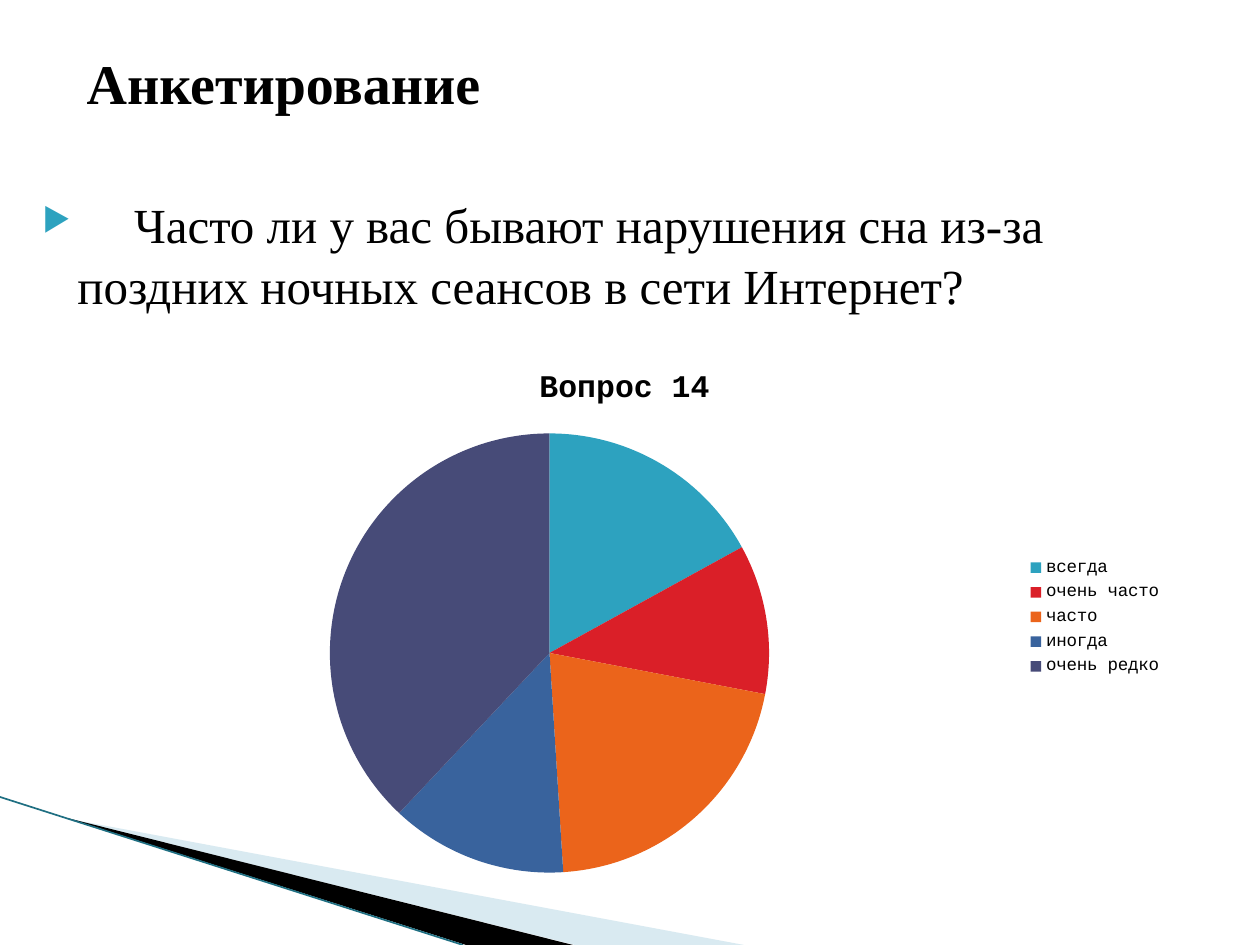
from dataclasses import dataclass

from lxml import etree
from pptx import Presentation
from pptx import util as u
from pptx.chart.data import CategoryChartData
from pptx.dml.color import RGBColor
from pptx.enum import chart as charts
from pptx.enum import shapes, text
from pptx.oxml.ns import qn

PX = 914400 / 126


@dataclass(frozen=True)
class Theme:
    serif: str = "Times New Roman"
    mono: str = "Courier New"
    ink: str = "000000"
    accent: str = "2DA2BF"
    pale: str = "A0CBDC"
    edge: str = "1F6F82"
    slices: tuple = ("2DA2BF", "DA1F28", "EB641B", "39639D", "474B78")
    title: int = 32
    body: int = 28
    gap: int = 27
    chart_title: int = 18
    legend: int = 10


THEME = Theme()


def px(value):
    return u.Emu(round(value * PX))


def color(value):
    return RGBColor.from_string(value)


def set_font(font, size, face, ink=THEME.ink, bold=False):
    font.size = u.Pt(size)
    font.name = face
    font.bold = bold
    font.color.rgb = color(ink)


def add_span(para, wording, spacing=0, **style):
    span = para.add_run()
    span.text = wording
    set_font(span.font, **style)
    if spacing:
        span.font._element.set("spc", str(spacing))


def add_bullet(para, mark, ink, percent, margin, indent):
    properties = para._p.get_or_add_pPr()
    properties.set("marL", str(px(margin)))
    properties.set("indent", str(px(indent)))
    shade = etree.SubElement(properties, qn("a:buClr"))
    etree.SubElement(shade, qn("a:srgbClr"), val=ink)
    etree.SubElement(properties, qn("a:buSzPct"), val=str(percent * 1000))
    etree.SubElement(properties, qn("a:buChar"), char=mark)


def add_wedge(page, left, top, points, fill, opacity=100):
    start, *rest = [(left + x, top + y) for x, y in points]
    builder = page.shapes.build_freeform(*start, scale=PX)
    builder.add_line_segments(rest, close=True)
    wedge = builder.convert_to_shape()
    wedge.shadow.inherit = False
    wedge.fill.solid()
    wedge.fill.fore_color.rgb = color(fill)
    wedge.line.fill.background()
    if opacity < 100:
        shade = wedge._element.spPr.find(qn("a:solidFill"))[0]
        etree.SubElement(shade, qn("a:alpha"), val=str(opacity * 1000))


def add_corner(page, left, top, width, height):
    bottom = height
    add_wedge(page, left, top, [(69, 22), (width, bottom), (575, bottom)],
              THEME.pale, opacity=40)
    add_wedge(page, left, top, [(67, 21), (573, bottom), (466, bottom)], THEME.ink)
    edge = page.shapes.add_connector(
        shapes.MSO_CONNECTOR.STRAIGHT,
        px(left), px(top), px(left + 463), px(top + bottom))
    edge.line.color.rgb = color(THEME.edge)
    edge.line.width = u.Pt(0.95)
    etree.SubElement(edge._element.spPr, qn("a:effectLst"))


def add_title(page, left, top, width, height):
    box = page.shapes.title
    box.left, box.top, box.width, box.height = map(px, (left, top, width, height))
    frame = box.text_frame
    frame.word_wrap = True
    frame.auto_size = text.MSO_AUTO_SIZE.NONE
    frame.vertical_anchor = text.MSO_ANCHOR.MIDDLE
    para = frame.paragraphs[0]
    para.alignment = text.PP_ALIGN.LEFT
    add_span(para, "Анкетирование", size=THEME.title, face=THEME.serif, bold=True)


def add_question(page, left, top, width, height):
    box = page.shapes.add_textbox(*map(px, (left, top, width, height)))
    frame = box.text_frame
    frame.word_wrap = True
    para = frame.paragraphs[0]
    para.line_spacing = 1.05
    add_bullet(para, "▶", THEME.accent, percent=68, margin=50, indent=-35)
    add_span(para, " ", spacing=1620, size=THEME.gap, face=THEME.mono)
    add_span(para, "Часто ли у вас бывают нарушения сна из-за "
             "поздних ночных сеансов в сети Интернет?",
             size=THEME.body, face=THEME.serif)


def add_answers(page, left, top, width, height):
    data = CategoryChartData()
    data.categories = ["всегда", "очень часто", "часто", "иногда", "очень редко"]
    data.add_series("Вопрос 14", (17, 11, 21, 13, 38))
    chart = page.shapes.add_chart(
        charts.XL_CHART_TYPE.PIE, *map(px, (left, top, width, height)), data).chart
    set_font(chart.font, THEME.legend, THEME.mono)
    chart.has_title = True
    para = chart.chart_title.text_frame.paragraphs[0]
    add_span(para, "Вопрос 14", size=THEME.chart_title, face=THEME.mono, bold=True)
    chart.chart_title.include_in_layout = False
    chart.has_legend = True
    chart.legend.position = charts.XL_LEGEND_POSITION.RIGHT
    chart.legend.include_in_layout = False
    set_font(chart.legend.font, THEME.legend, THEME.mono)
    plot = chart.plots[0]
    plot.vary_by_categories = True
    for index, shade in enumerate(THEME.slices):
        fill = plot.series[0].points[index].format.fill
        fill.solid()
        fill.fore_color.rgb = color(shade)


def main():
    deck = Presentation()
    deck.slide_width, deck.slide_height = px(1260), px(945)
    page = deck.slides.add_slide(deck.slide_layouts[5])
    add_corner(page, 0, 797, 744, 148)
    add_title(page, 74, 4, 1029, 157)
    add_question(page, 15, 185, 1222, 757)
    add_answers(page, 74, 344, 1101, 546)
    deck.save("out.pptx")


if __name__ == "__main__":
    main()
